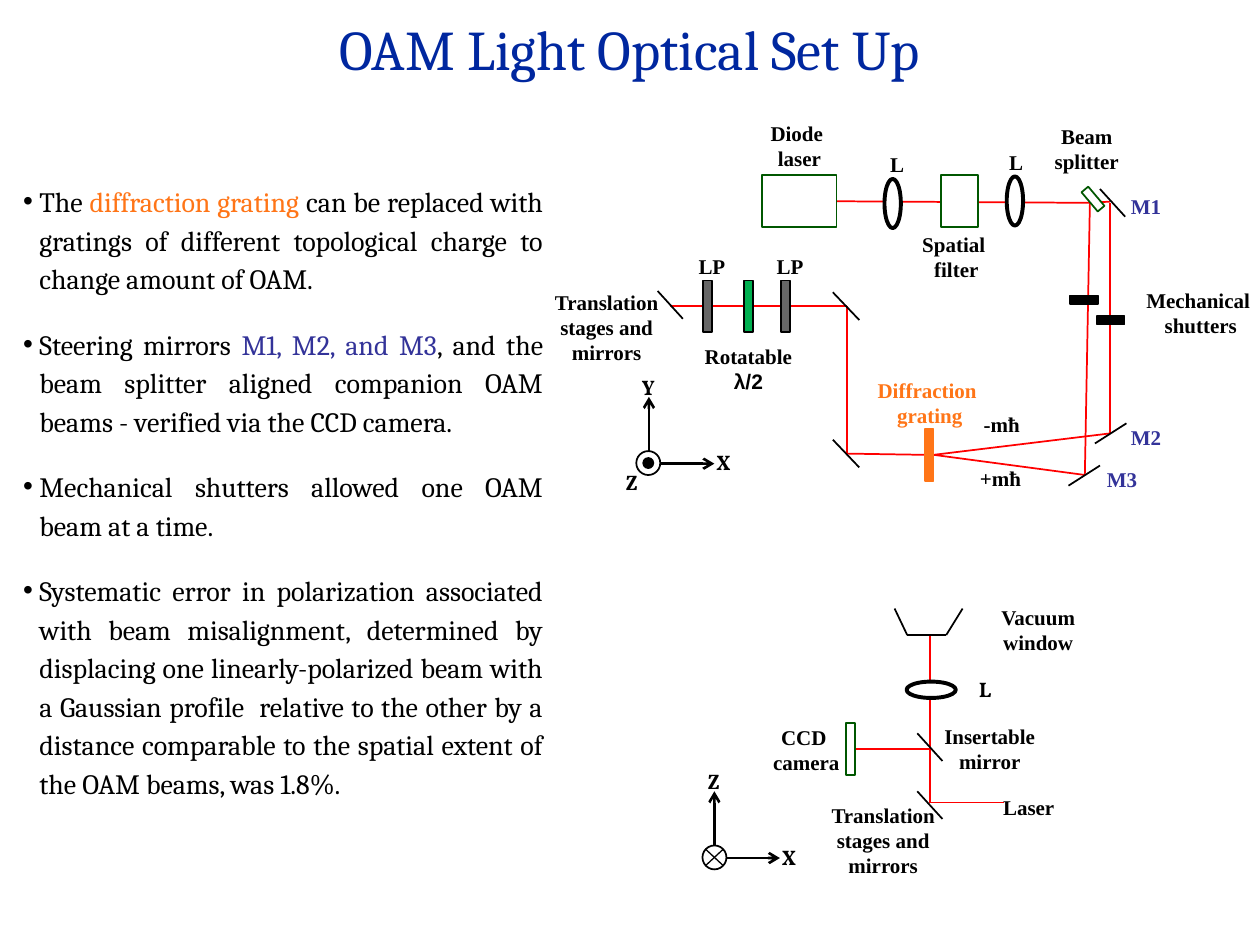
"""Build the slide on the optical set-up for OAM light."""
from lxml import etree
from pptx import Presentation
from pptx.dml.color import RGBColor
from pptx.enum.shapes import MSO_CONNECTOR, MSO_SHAPE
from pptx.enum.text import MSO_ANCHOR, MSO_AUTO_SIZE, PP_ALIGN
from pptx.oxml.ns import qn
from pptx.util import Inches, Pt

BLACK = RGBColor(0x00, 0x00, 0x00)
WHITE = RGBColor(0xFF, 0xFF, 0xFF)
RED = RGBColor(0xFF, 0x00, 0x00)
ORANGE = RGBColor(0xFF, 0x75, 0x17)
NAVY = RGBColor(0x00, 0x27, 0x9F)
INDIGO = RGBColor(0x33, 0x33, 0x99)
FOREST = RGBColor(0x00, 0x57, 0x00)
GREEN = RGBColor(0x00, 0xB0, 0x50)
GRAY = RGBColor(0x66, 0x66, 0x66)
TIMES, VOLLKORN, CAMBRIA = "Times New Roman", "Vollkorn", "Cambria"
RECT, OVAL = MSO_SHAPE.RECTANGLE, MSO_SHAPE.OVAL

prs = Presentation()
prs.slide_width, prs.slide_height = Inches(10), Inches(7.5)
s = prs.slides.add_slide(prs.slide_layouts[6])
U = prs.slide_width / 100


def write(text, at, size=12, font=TIMES, color=BLACK, bold=True, wrap=False,
          align=PP_ALIGN.CENTER, anchor=MSO_ANCHOR.TOP, spacing=None,
          gap=0, bullet=None, fit=True):
    tf = s.shapes.add_textbox(*(round(v * U) for v in at)).text_frame
    tf.word_wrap, tf.vertical_anchor = wrap, anchor
    tf.auto_size = MSO_AUTO_SIZE.SHAPE_TO_FIT_TEXT if fit else MSO_AUTO_SIZE.NONE
    paragraphs = text.split("\n") if isinstance(text, str) else text
    for i, runs in enumerate(paragraphs):
        p = tf.paragraphs[0] if i == 0 else tf.add_paragraph()
        p.alignment = align
        if spacing:
            p.line_spacing = spacing
        if gap and i:
            p.space_before = Pt(gap)
        if bullet:
            pPr = p._p.get_or_add_pPr()
            pPr.set("marL", str(Inches(0.13)))
            pPr.set("indent", str(-Inches(0.13)))
            etree.SubElement(pPr, qn("a:buFont")).set("typeface", "Arial")
            etree.SubElement(pPr, qn("a:buChar")).set("char", bullet)
        for words, tint in [(runs, color)] if isinstance(runs, str) else runs:
            r = p.add_run()
            r.text = words
            r.font.size, r.font.name, r.font.bold = Pt(size), font, bold
            r.font.color.rgb = tint
    return tf


def line(x1, y1, x2, y2, color=BLACK, width=1, arrow=False):
    ln = s.shapes.add_connector(MSO_CONNECTOR.STRAIGHT,
                                *(round(v * U) for v in (x1, y1, x2, y2)))
    ln.line.color.rgb, ln.line.width = color, Pt(width)
    if arrow:
        etree.SubElement(ln.line._get_or_add_ln(), qn("a:tailEnd")).set("type", "arrow")
    etree.SubElement(ln._element.spPr, qn("a:effectLst"))
    return ln


write("OAM Light Optical Set Up", (0, 0.2, 100, 8.1), size=32, font=CAMBRIA,
      color=NAVY, bold=False, wrap=True, anchor=MSO_ANCHOR.MIDDLE,
      spacing=0.85, fit=False)
write([
    [("The ", BLACK), ("diffraction grating ", ORANGE),
     ("can be replaced with gratings of different topological charge to "
      "change amount of OAM.", BLACK)],
    [("Steering mirrors ", BLACK), ("M1, M2, and M3", INDIGO),
     (", and the beam splitter aligned companion OAM beams - verified via "
      "the CCD camera.", BLACK)],
    "Mechanical shutters allowed one OAM beam at a time.",
    "Systematic error in polarization associated with beam misalignment, "
    "determined by displacing one linearly-polarized beam with a Gaussian "
    "profile  relative to the other by a distance comparable to the spatial "
    "extent of the OAM beams, was 1.8%.",
], (0.85, 13.75, 43.25, 52.9), size=16, font=CAMBRIA, bold=False, wrap=True,
    align=PP_ALIGN.JUSTIFY, spacing=1.15, gap=15.3, bullet="•", fit=False)

for ends in [
    (53.2, 24.3, 67.2, 24.3), (67.2, 36, 67.2, 24.3),
    (86.5, 16.1, 88.1, 16), (86.5, 16.1, 86.1, 37.7),
    (88.1, 16.1, 88.1, 34.4), (73.8, 63.7, 79.7, 63.7),
    (73.8, 63.7, 73.8, 59.4), (73.8, 59.5, 73.8, 50.4),
]:
    line(*ends, color=RED)
laser_beam = line(66.4, 16, 86.5, 16.1, RED)
grating_beam = line(73.4, 36.1, 67.2, 36, RED)
plus_beam = line(74.1, 36.1, 86.1, 37.7, RED)
minus_beam = line(74.1, 36.1, 88.1, 34.4, RED)
camera_beam = line(67.9, 59.45, 73.8, 59.45, RED)

for x, y, dx, dy in [
    (88.3, 16.1, 1, 1.1), (88.15, 34.4, 1.25, -0.8), (86.05, 37.75, 1.25, -0.8),
    (67.15, 24.3, 1.05, 1.1), (53.2, 24.2, 1, 1.1), (67.15, 36, 1.05, 1.1),
    (73.8, 59.3, 1, 1.1), (73.8, 63.9, 1, 1.1),
]:
    line(x - dx, y - dy, x + dx, y + dy)
for ends in [(72, 50.4, 75.1, 50.4), (72, 50.4, 71, 48.3), (75.1, 50.4, 76.4, 48.3)]:
    line(*ends)

AXES = [(51.5, 36.8, "Y"), (56.7, 68.1, "Z")]
for x, y, up in AXES:
    line(x, y, x + 5.2, y, width=1.5, arrow=True)
    line(x, y, x, y - 5.3, width=1.5, arrow=True)
    write(up, (x - 1.6, y - 7.6, 3.1, 3), font=VOLLKORN)
    write("X", (x + 4.35, y - 1.6, 3.1, 3), font=VOLLKORN)
write("Z", (48.6, 36.8, 3.1, 3), font=VOLLKORN)

parts = {}
for name, kind, x, y, w, h, fill, edge, width, turn in [
    ("laser", RECT, 60.5, 13.9, 5.9, 4.15, WHITE, FOREST, 1, 0),
    ("spatial filter", RECT, 74.7, 13.9, 2.9, 4.1, WHITE, FOREST, 1, 0),
    ("left lens", OVAL, 70.2, 14.2, 1.3, 3.9, WHITE, BLACK, 2.25, 0),
    ("right lens", OVAL, 79.9, 14, 1.3, 3.9, WHITE, BLACK, 2.25, 0),
    ("window lens", OVAL, 73.25, 52.8, 1.3, 3.9, WHITE, BLACK, 2.25, 90),
    ("splitter", RECT, 86.4, 14.8, 0.7, 2, WHITE, FOREST, 1, 319.8),
    ("left shutter", RECT, 85.7, 22.7, 0.7, 2.2, BLACK, BLACK, 1, 270),
    ("right shutter", RECT, 87.8, 24.3, 0.7, 2.2, BLACK, BLACK, 1, 270),
    ("left polarizer", RECT, 55.8, 22.25, 0.7, 4.1, GRAY, BLACK, 1, 0),
    ("wave plate", RECT, 59.05, 22.25, 0.7, 4.1, GREEN, BLACK, 1, 0),
    ("right polarizer", RECT, 62, 22.25, 0.7, 4.1, GRAY, BLACK, 1, 0),
    ("grating", RECT, 73.4, 34.05, 0.7, 4.1, ORANGE, ORANGE, 1, 0),
    ("camera", RECT, 67.15, 57.4, 0.7, 4.1, WHITE, FOREST, 1, 0),
    ("out axis", OVAL, 50.5, 35.8, 1.9, 1.9, WHITE, BLACK, 1, 0),
    ("out dot", OVAL, 51.05, 36.35, 0.8, 0.8, BLACK, BLACK, 1, 0),
    ("in axis", OVAL, 55.75, 67.1, 1.9, 1.9, WHITE, BLACK, 1, 0),
]:
    sp = s.shapes.add_shape(kind, *(round(v * U) for v in (x, y, w, h)))
    sp.rotation, sp.shadow.inherit = turn, False
    sp.fill.solid()
    sp.fill.fore_color.rgb = fill
    sp.line.color.rgb, sp.line.width = edge, Pt(width)
    parts[name] = sp

for beam, name, side in [
    (laser_beam, "laser", 3), (grating_beam, "grating", 1),
    (plus_beam, "grating", 3), (minus_beam, "grating", 3),
    (camera_beam, "camera", 3),
]:
    beam.begin_connect(parts[name], side)
for dy in (0.65, -0.65):
    line(57.4, 68.05 + dy, 56, 68.05 - dy, width=0.75)

for text, at, color in [
    ("L", (69.65, 11.55, 3.1, 3), BLACK),
    ("L", (79.1, 11.35, 3.1, 3), BLACK),
    ("Laser", (78.6, 62.6, 6.1, 3), BLACK),
    ("Diode \nlaser", (60.15, 9.05, 6.6, 5), BLACK),
    ("Beam\nsplitter", (82.65, 9.3, 7.2, 5), BLACK),
    ("Diffraction \ngrating", (68.6, 29.45, 10.4, 5), ORANGE),
    ("M1", (88.7, 14.9, 4.5, 3), INDIGO),
    ("M2", (88.7, 33.2, 4.5, 3), INDIGO),
    ("M3", (86.8, 36.55, 4.5, 3), INDIGO),
]:
    write(text, at, color=color)
write("Mechanical \nshutters", (90.7, 22.3, 9.2, 5), fit=False)
write("L", (76.7, 53.2, 3, 3), font=VOLLKORN)
tf = write("Rotatable\nλ/2", (54.9, 26.75, 9, 5))
tf.paragraphs[1].runs[0].font.name = "Arial"

for text, at in [
    ("LP", (52.4, 19.65, 8.2, 3)),
    ("LP", (58.6, 19.65, 8.2, 3)),
    ("Spatial \nfilter", (70.95, 17.9, 9.9, 5)),
    ("CCD \ncamera", (59.8, 57, 8.4, 5)),
    ("Vacuum\nwindow", (78.2, 47.5, 8.4, 5)),
    ("Insertable mirror", (72.8, 56.9, 11.5, 5)),
    ("Translation stages and mirrors", (41.95, 22.45, 12.4, 7.1)),
    ("Translation stages and mirrors", (63.9, 63.2, 12.4, 7.1)),
    ("-mħ", (75.3, 32.2, 8.4, 3)),
    ("+mħ", (75.2, 36.45, 8.4, 3)),
]:
    write(text, at, wrap=True)

prs.save("out.pptx")
